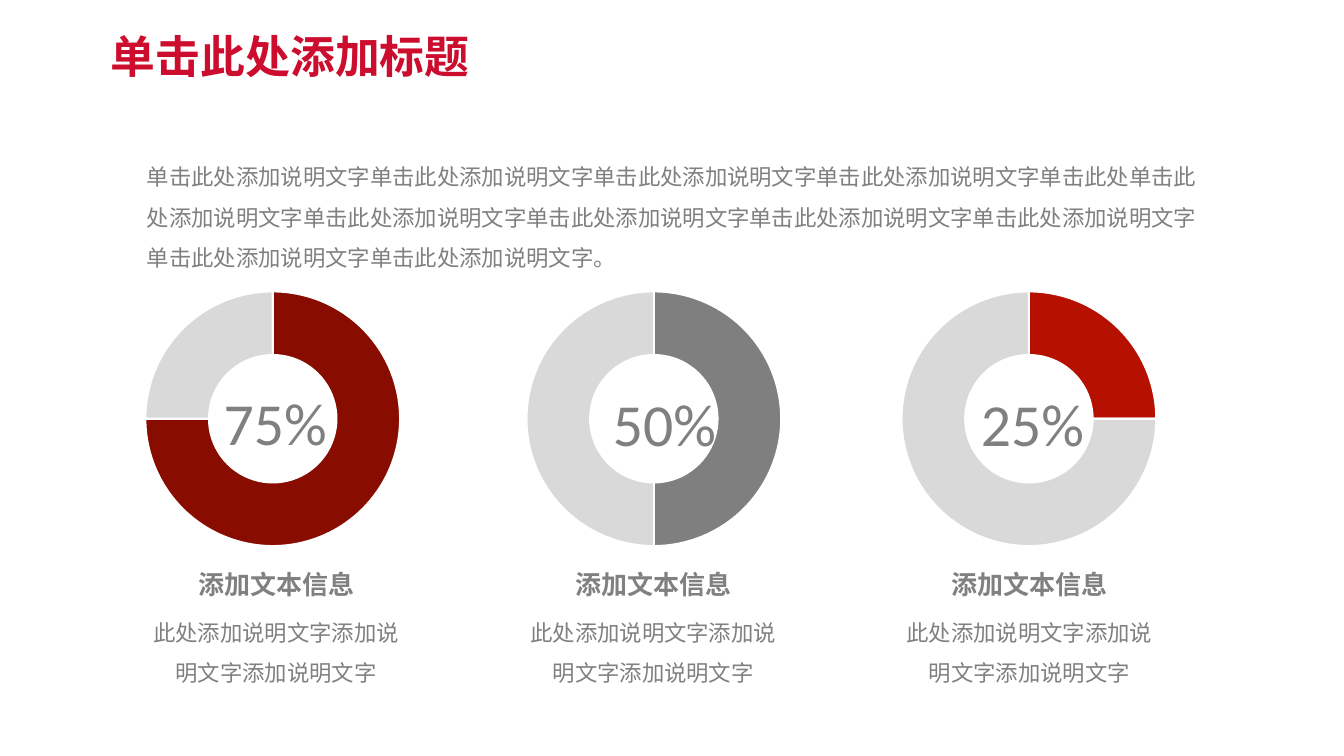
from lxml import etree
from pptx import Presentation
from pptx.chart.data import CategoryChartData
from pptx.dml.color import RGBColor
from pptx.enum.chart import XL_CHART_TYPE
from pptx.enum.text import MSO_ANCHOR, MSO_AUTO_SIZE, PP_ALIGN
from pptx.oxml.ns import qn
from pptx.util import Inches, Pt

DOUGHNUT = XL_CHART_TYPE.DOUGHNUT
LEFT, CENTER = PP_ALIGN.LEFT, PP_ALIGN.CENTER
MIDDLE = MSO_ANCHOR.MIDDLE
NO_FIT = MSO_AUTO_SIZE.NONE

CRIMSON = RGBColor(0xCC, 0x0D, 0x2E)
DARK_RED = RGBColor(0x88, 0x0C, 0x00)
RED = RGBColor(0xB6, 0x10, 0x00)
MID_GRAY = RGBColor(0x7F, 0x7F, 0x7F)
TEXT_GRAY = RGBColor(0x80, 0x80, 0x80)
LIGHT_GRAY = RGBColor(0xD9, 0xD9, 0xD9)
WHITE = RGBColor(0xFF, 0xFF, 0xFF)
BLACK = RGBColor(0, 0, 0)

CJK_FONT = "Noto Sans CJK SC"
PHRASE = "单击此处添加说明文字"
INTRO = PHRASE * 4 + "单击此处" + PHRASE * 7 + "。"
CAPTION_HEADING = "添加文本信息"
CAPTION_BODY = "此处" + "添加说明文字" * 3

RINGS = [
    (75, DARK_RED, 0.79, 1.47, 3.78, 1.41),
    (50, MID_GRAY, 4.57, 5.33, 3.79, 5.15),
    (25, RED, 8.29, 8.98, 3.79, 8.88),
]


def style(paragraph, size, color, font=CJK_FONT, bold=False, align=LEFT):
    paragraph.alignment = align
    paragraph.font.size = Pt(size)
    paragraph.font.bold = bold
    paragraph.font.color.rgb = color
    paragraph.font.name = font
    defaults = paragraph._p.pPr.find(qn("a:defRPr"))
    etree.SubElement(defaults, qn("a:ea"), typeface=CJK_FONT)


def style_body(paragraph, align=LEFT):
    paragraph.line_spacing = 1.5
    style(paragraph, 16, TEXT_GRAY, align=align)


def add_text_frame(slide, left, top, width, height):
    box = slide.shapes.add_textbox(
        Inches(left), Inches(top), Inches(width), Inches(height))
    box.text_frame.word_wrap = True
    return box.text_frame


def add_title(slide):
    title = slide.shapes.title
    title.left, title.top = Inches(1), Inches(0.28)
    title.width, title.height = Inches(11.5), Inches(0.62)
    frame = title.text_frame
    frame.text = "单击此处添加标题"
    frame.vertical_anchor = MIDDLE
    frame.auto_size = NO_FIT
    heading = frame.paragraphs[0]
    heading.line_spacing = 0.9
    style(heading, 32, CRIMSON, font="Montserrat", bold=True)


def add_intro(slide):
    frame = add_text_frame(slide, 1.36, 1.44, 10.76, 1.36)
    frame.text = INTRO
    style_body(frame.paragraphs[0])


def set_plot_area(chart, **fractions):
    plot_area = chart._chartSpace.chart.plotArea
    for old_layout in plot_area.findall(qn("c:layout")):
        plot_area.remove(old_layout)
    layout = etree.Element(qn("c:layout"))
    manual = etree.SubElement(layout, qn("c:manualLayout"))
    settings = {"layoutTarget": "inner", "xMode": "edge", "yMode": "edge"}
    for tag, value in {**settings, **fractions}.items():
        etree.SubElement(manual, qn(f"c:{tag}"), val=str(value))
    plot_area.insert(0, layout)


def add_ring(slide, percent, color, left):
    ring_data = CategoryChartData()
    ring_data.categories = ["1", "2"]
    ring_data.add_series("Series 1", [percent, 100 - percent])
    chart = slide.shapes.add_chart(
        DOUGHNUT, Inches(left), Inches(2.74), Inches(3.83), Inches(2.83),
        ring_data).chart
    chart.has_legend = False
    chart.has_title = False
    chart.font.size = Pt(10)
    chart.font.name = "Arial"
    chart.font.color.rgb = BLACK
    plot = chart.plots[0]
    plot.vary_by_categories = True
    plot.has_data_labels = False
    for index, slice_color in enumerate([color, LIGHT_GRAY]):
        slice_format = plot.series[0].points[index].format
        slice_format.fill.solid()
        slice_format.fill.fore_color.rgb = slice_color
        slice_format.line.color.rgb = WHITE
        slice_format.line.width = Pt(1.5)
    plot._element.find(qn("c:holeSize")).set("val", "68")
    set_plot_area(chart, x=0.17, y=0.05, w=0.66, h=0.9)


def add_percent(slide, percent, left, top):
    frame = add_text_frame(slide, left, top, 2.52, 0.82)
    frame.text = f"{percent}%"
    style(frame.paragraphs[0], 42.6, TEXT_GRAY, font="Calibri", align=CENTER)


def add_caption(slide, left):
    frame = add_text_frame(slide, left, 5.59, 2.66, 1.52)
    frame.text = CAPTION_HEADING
    style(frame.paragraphs[0], 18.6, TEXT_GRAY, bold=True, align=CENTER)
    body = frame.add_paragraph()
    body.text = CAPTION_BODY
    body.space_before = Pt(4)
    style_body(body, align=CENTER)


def main():
    deck = Presentation()
    deck.slide_width, deck.slide_height = Inches(13.33), Inches(7.5)
    slide = deck.slides.add_slide(deck.slide_layouts[5])
    add_title(slide)
    add_intro(slide)
    for percent, color, ring_left, label_left, label_top, caption_left in RINGS:
        add_ring(slide, percent, color, ring_left)
        add_percent(slide, percent, label_left, label_top)
        add_caption(slide, caption_left)
    deck.save("out.pptx")


if __name__ == "__main__":
    main()
